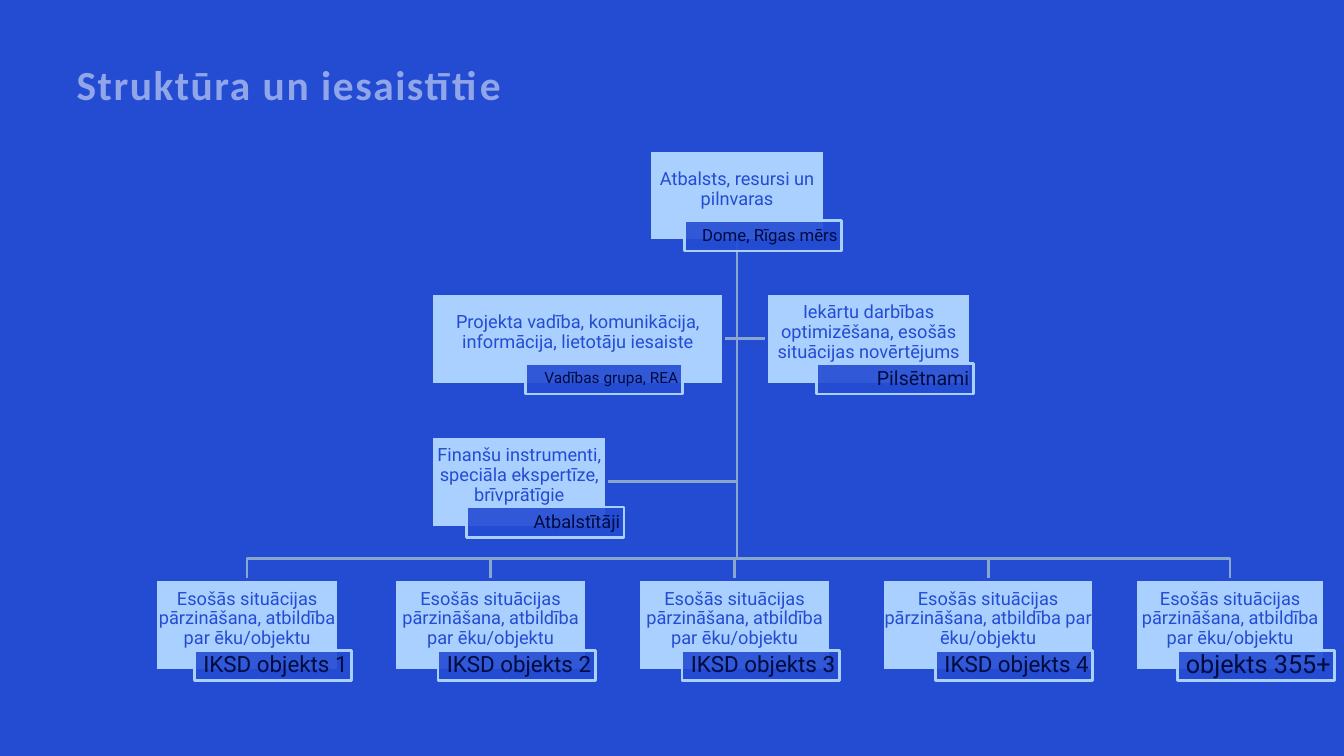
from collections import namedtuple

from pptx import Presentation
from pptx.dml.color import RGBColor
from pptx.enum.shapes import MSO_SHAPE as Preset
from pptx.enum.text import MSO_ANCHOR as Anchor, PP_ALIGN as Align
from pptx.oxml.ns import qn
from pptx.oxml.xmlchemy import OxmlElement
from pptx.util import Inches, Pt

BLUE = RGBColor(0x24, 0x4C, 0xD3)
LIGHT_BLUE = RGBColor(0xAA, 0xD0, 0xFF)
GREY_BLUE = RGBColor(0x88, 0xA7, 0xCC)
NAVY = RGBColor(0x00, 0x0B, 0x40)
PALE_BLUE = RGBColor(0x91, 0xA5, 0xE9)  # half white over BLUE

CARD_HEIGHT = 0.9
TAG_WIDTH, TAG_HEIGHT = 1.56, 0.3
TAG_SHIFT, TAG_DROP = -0.52, 0.7  # from the card's centre and top
TRUNK_X, TRUNK_TOP, BUS_Y = 7.31, 2.39, 5.54
UNIT_TOP = 5.75
UNIT_DUTY = "Esošās situācijas pārzināšana, atbildība par ēku/objektu"

Card = namedtuple("Card", "left top width duty owner owner_size")

BOARD = Card(6.44, 1.49, 1.74, "Atbalsts, resursi un pilnvaras", "Dome, Rīgas mērs", 12)
UNITS = [
    Card(left, UNIT_TOP, width, UNIT_DUTY, owner, size)
    for left, width, owner, size in [
        (1.54, 1.82, "IKSD objekts 1", 16),
        (3.91, 1.91, "IKSD objekts 2", 16),
        (6.33, 1.91, "IKSD objekts 3", 16),
        (8.75, 2.1, "IKSD objekts 4", 16),
        (11.26, 1.88, "objekts 355+", 18),
    ]
]
ASSISTANTS = [
    Card(4.28, 2.91, 2.9, "Projekta vadība, komunikācija, informācija, lietotāju iesaiste",
         "Vadības grupa, REA", 11),
    Card(7.6, 2.91, 2.03, "Iekārtu darbības optimizēšana, esošās situācijas novērtējums",
         "Pilsētnami", 14),
    Card(4.28, 4.33, 1.74, "Finanšu instrumenti, speciāla ekspertīze, brīvprātīgie",
         "Atbalstītāji", 13),
]


def set_attributes(target, values):
    for name, value in values.items():
        setattr(target, name, value)


def set_opacity(properties, percent):
    """Make the first colour found in an XML properties element translucent."""
    alpha = OxmlElement("a:alpha")
    alpha.set("val", str(percent * 1000))
    next(properties.iter(qn("a:srgbClr"))).append(alpha)


def write_text(shape, text, font, align, anchor, margins):
    """Fill the shape with one paragraph; margins are left, top, right, bottom."""
    frame = shape.text_frame
    sides = ("margin_left", "margin_top", "margin_right", "margin_bottom")
    set_attributes(frame, {"word_wrap": True, "vertical_anchor": anchor})
    set_attributes(frame, dict(zip(sides, map(Inches, margins))))
    paragraph = frame.paragraphs[0]
    set_attributes(paragraph, {"alignment": align, "line_spacing": 0.9})
    run = paragraph.add_run()
    run.text = text
    color = font.pop("color")
    set_attributes(run.font, font)
    run.font.color.rgb = color
    return run


def add_title(slide, text):
    box = slide.shapes.add_textbox(Inches(0.76), Inches(0.64), Inches(5.93), Inches(0.45))
    font = {"name": "Calibri", "size": Pt(29.6), "bold": True, "color": PALE_BLUE}
    run = write_text(box, text, font, Align.LEFT, Anchor.TOP, (0, 0, 0, 0))
    run.font._element.set("spc", "110")


def add_box(slide, left, top, width, height, fill, line):
    shape = slide.shapes.add_shape(
        Preset.RECTANGLE, Inches(left), Inches(top), Inches(width), Inches(height))
    shape.shadow.inherit = False
    shape.fill.solid()
    shape.fill.fore_color.rgb = fill
    shape.line.color.rgb = line
    shape.line.width = Pt(2)
    return shape


def add_card(slide, card):
    box = add_box(slide, card.left, card.top, card.width, CARD_HEIGHT, LIGHT_BLUE, BLUE)
    font = {"name": "Roboto", "size": Pt(13), "color": BLUE}
    write_text(box, card.duty, font, Align.CENTER, Anchor.MIDDLE, (0.01, 0.01, 0.01, 0.13))

    tag_left = card.left + card.width / 2 + TAG_SHIFT
    tag = add_box(slide, tag_left, card.top + TAG_DROP, TAG_WIDTH, TAG_HEIGHT, BLUE, LIGHT_BLUE)
    set_opacity(tag._element.spPr, 90)
    font = {"name": "Roboto", "size": Pt(card.owner_size), "color": NAVY}
    write_text(tag, card.owner, font, Align.RIGHT, Anchor.MIDDLE, (0.04, 0.01, 0.04, 0.01))


def add_branch(slide, *turns):
    """Draw an elbow line from the top of the trunk through the given points."""
    points = [(Inches(x), Inches(y)) for x, y in turns]
    builder = slide.shapes.build_freeform(Inches(TRUNK_X), Inches(TRUNK_TOP))
    builder.add_line_segments(points, close=False)
    branch = builder.convert_to_shape()
    branch.shadow.inherit = False
    branch.fill.background()
    branch.line.color.rgb = GREY_BLUE
    branch.line.width = Pt(2)


def add_branches(slide):
    for card in ASSISTANTS:
        middle = card.top + CARD_HEIGHT / 2
        near_edge = card.left if card.left > TRUNK_X else card.left + card.width
        add_branch(slide, (TRUNK_X, middle), (near_edge, middle))
    for card in UNITS:
        center = card.left + card.width / 2
        add_branch(slide, (TRUNK_X, BUS_Y), (center, BUS_Y), (center, card.top))


def main():
    presentation = Presentation()
    presentation.slide_width = Inches(13.33)
    presentation.slide_height = Inches(7.5)
    slide = presentation.slides.add_slide(presentation.slide_layouts[6])
    slide.background.fill.solid()
    slide.background.fill.fore_color.rgb = BLUE

    add_title(slide, "Struktūra un iesaistītie")
    add_branches(slide)
    for card in [BOARD, *UNITS, *ASSISTANTS]:
        add_card(slide, card)
    presentation.save("out.pptx")


if __name__ == "__main__":
    main()
